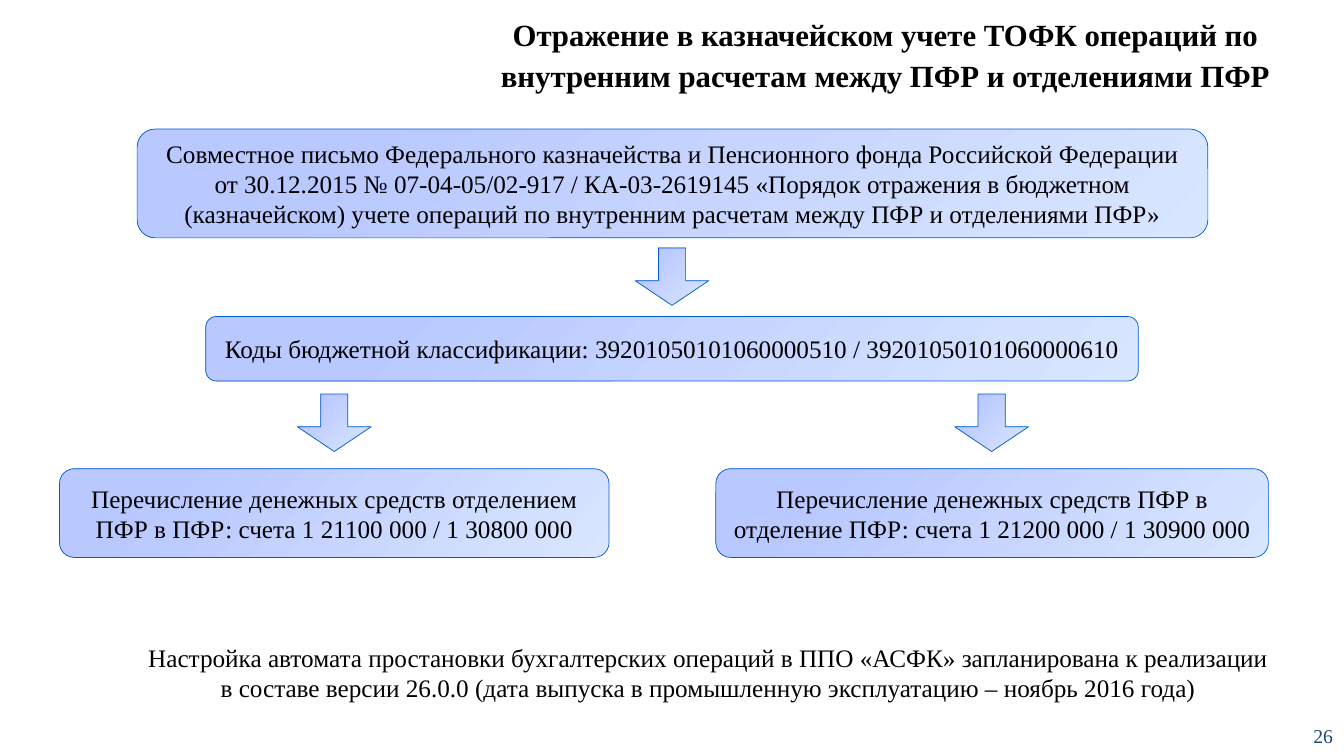
from dataclasses import dataclass

from lxml.etree import SubElement
from pptx import Presentation
from pptx.dml.color import RGBColor
from pptx.enum.shapes import MSO_SHAPE as Preset
from pptx.enum.text import MSO_ANCHOR as Anchor, PP_ALIGN as Align
from pptx.oxml.ns import qn
from pptx.util import Inches, Pt

BLACK = RGBColor(0x00, 0x00, 0x00)
NAVY = RGBColor(0x1F, 0x49, 0x7D)
OUTLINE = RGBColor(0x00, 0x5B, 0xD3)
GRADIENT = ((0.18, RGBColor(0xB9, 0xC8, 0xFF)), (1.0, RGBColor(0xD9, 0xE6, 0xFF)))
FONT = "Times New Roman"
ARROW_LENGTH, ARROW_WIDTH = 0.57, 0.73


@dataclass(frozen=True)
class Label:
    text: str
    left: float
    top: float
    width: float
    height: float
    size: int = 18
    bold: bool = False
    color: RGBColor = BLACK
    align: Align = Align.CENTER
    anchor: Anchor = Anchor.TOP
    wrap: bool = True
    spacing: float = 1.0


@dataclass(frozen=True)
class Step:
    text: str
    left: float
    top: float
    width: float
    height: float


@dataclass(frozen=True)
class Arrow:
    left: float
    top: float


LABELS = (
    Label("26", 12.86, 7.14, 0.46, 0.32, size=14, color=NAVY,
          align=Align.RIGHT, anchor=Anchor.MIDDLE, wrap=False),
    Label("Отражение в казначейском учете ТОФК операций по внутренним "
          "расчетам между ПФР и отделениями ПФР",
          4.25, 0.07, 9.06, 0.88, size=22, bold=True, spacing=1.1),
    Label("Настройка автомата простановки бухгалтерских операций в ППО «АСФК» "
          "запланирована к реализации в составе версии 26.0.0 (дата выпуска в "
          "промышленную эксплуатацию – ноябрь 2016 года)",
          1.31, 6.32, 11.43, 0.71),
)
STEPS = (
    Step("Совместное письмо Федерального казначейства и Пенсионного фонда "
         "Российской Федерации от 30.12.2015 № 07-04-05/02-917 / "
         "КА-03-2619145 «Порядок отражения в бюджетном (казначейском) учете "
         "операций по внутренним расчетам между ПФР и отделениями ПФР»",
         1.36, 1.28, 10.62, 1.08),
    Step("Коды бюджетной классификации: "
         "39201050101060000510 / 39201050101060000610",
         2.04, 3.14, 9.25, 0.64),
    Step("Перечисление денежных средств отделением ПФР в ПФР: "
         "счета 1 21100 000 / 1 30800 000", 0.59, 4.65, 5.45, 0.88),
    Step("Перечисление денежных средств ПФР в отделение ПФР: "
         "счета 1 21200 000 / 1 30900 000", 7.1, 4.65, 5.48, 0.88),
)
ARROWS = (Arrow(6.38, 2.38), Arrow(3.03, 3.83), Arrow(9.55, 3.83))


def write(frame, text: str, size: int = 18, bold: bool = False,
          color: RGBColor = BLACK, align: Align = Align.CENTER) -> None:
    frame.text = text
    paragraph = frame.paragraphs[0]
    paragraph.alignment = align
    font = paragraph.runs[0].font
    font.name, font.size, font.bold = FONT, Pt(size), bold
    font.color.rgb = color


def paint(shape) -> None:
    """Apply the radial blue gradient and thin outline."""
    shape.shadow.inherit = False
    shape.line.color.rgb = OUTLINE
    shape.line.width = Pt(0.5)
    shape.fill.gradient()
    for stop, (position, color) in zip(shape.fill.gradient_stops, GRADIENT):
        stop.position = position
        stop.color.rgb = color
    # Radiate from the top left corner
    gradient = shape.element.spPr.find(qn("a:gradFill"))
    gradient.remove(gradient.find(qn("a:lin")))
    radial = SubElement(gradient, qn("a:path"), {"path": "circle"})
    SubElement(radial, qn("a:fillToRect"), {"r": "100000", "b": "100000"})


def add_label(slide, label: Label) -> None:
    box = slide.shapes.add_textbox(Inches(label.left), Inches(label.top),
                                   Inches(label.width), Inches(label.height))
    frame = box.text_frame
    frame.word_wrap = label.wrap
    frame.vertical_anchor = label.anchor
    write(frame, label.text, label.size, label.bold, label.color, label.align)
    frame.paragraphs[0].line_spacing = label.spacing


def add_step(slide, step: Step) -> None:
    box = slide.shapes.add_shape(Preset.ROUNDED_RECTANGLE,
                                 Inches(step.left), Inches(step.top),
                                 Inches(step.width), Inches(step.height))
    paint(box)
    box.text_frame.word_wrap = True
    box.text_frame.vertical_anchor = Anchor.MIDDLE
    write(box.text_frame, step.text)


def add_arrow(slide, arrow: Arrow) -> None:
    pointer = slide.shapes.add_shape(Preset.RIGHT_ARROW,
                                     Inches(arrow.left), Inches(arrow.top),
                                     Inches(ARROW_LENGTH), Inches(ARROW_WIDTH))
    pointer.rotation = 90
    pointer.adjustments[0] = 0.37
    pointer.adjustments[1] = 0.43
    paint(pointer)


def main() -> None:
    deck = Presentation()
    deck.slide_width, deck.slide_height = Inches(13.33), Inches(7.5)
    slide = deck.slides.add_slide(deck.slide_layouts[6])
    # Page number, title and closing note
    for label in LABELS:
        add_label(slide, label)
    # Flow from the joint letter to the accounts
    for step in STEPS:
        add_step(slide, step)
    for arrow in ARROWS:
        add_arrow(slide, arrow)
    deck.save("out.pptx")


if __name__ == "__main__":
    main()
